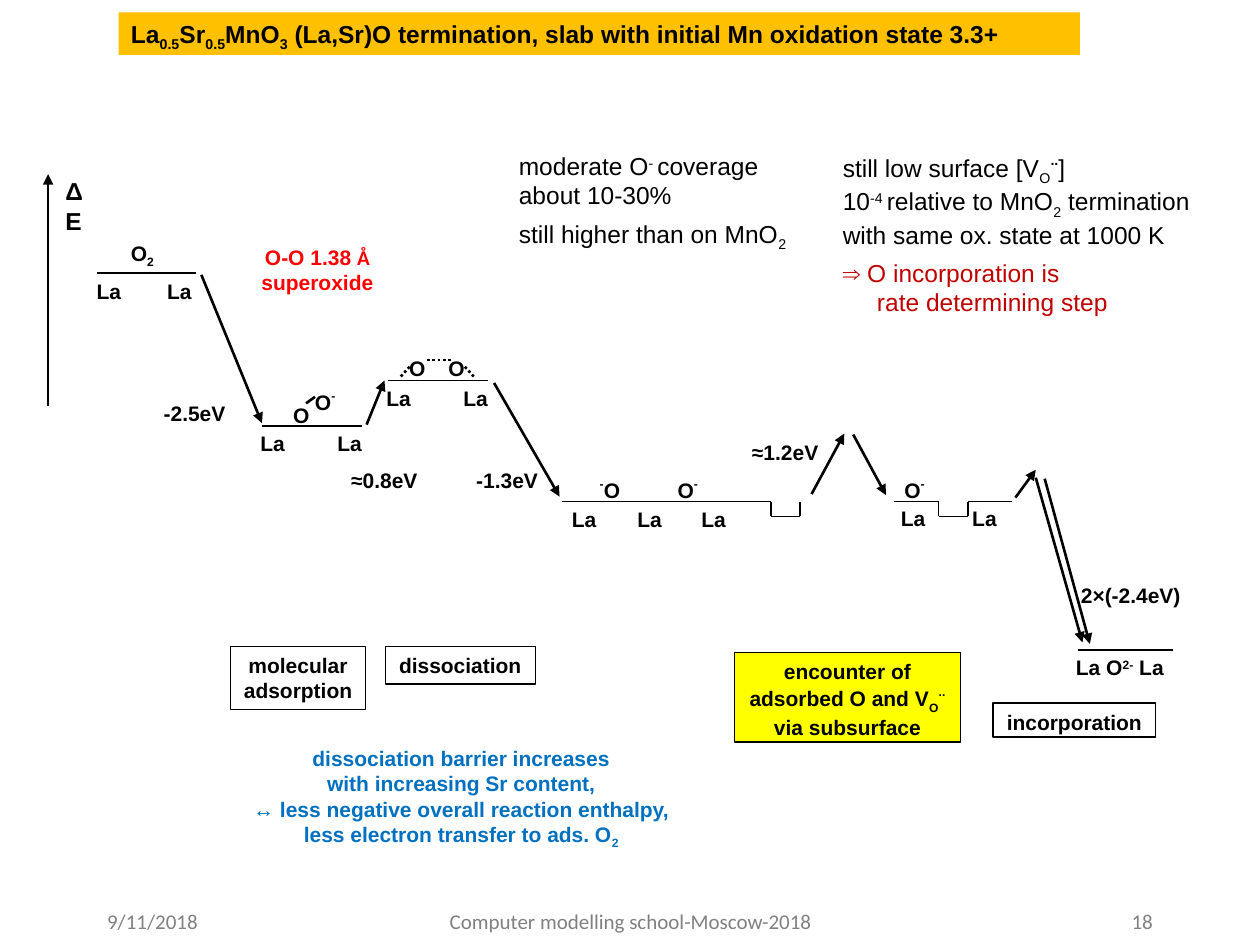
from lxml.etree import SubElement
from pptx import Presentation
from pptx.dml.color import RGBColor
from pptx.enum.dml import MSO_LINE
from pptx.enum.shapes import MSO_CONNECTOR, MSO_SHAPE
from pptx.enum.text import MSO_ANCHOR, PP_ALIGN
from pptx.oxml.ns import qn
from pptx.util import Cm, Pt

BLACK = RGBColor(0x00, 0x00, 0x00)
GRAY = RGBColor(0x80, 0x80, 0x80)
RED = RGBColor(0xFF, 0x00, 0x00)
DARK_RED = RGBColor(0xC0, 0x00, 0x00)
BLUE = RGBColor(0x00, 0x70, 0xC0)
YELLOW = RGBColor(0xFF, 0xFF, 0x00)
ORANGE = RGBColor(0xFF, 0xC0, 0x00)

SUB = -25
SUPER = 30
HIGH = 50
LEFT, CENTER, RIGHT = PP_ALIGN.LEFT, PP_ALIGN.CENTER, PP_ALIGN.RIGHT

presentation = Presentation()
presentation.slide_width = Cm(25.4)
presentation.slide_height = Cm(19.05)
slide = presentation.slides.add_slide(presentation.slide_layouts[6])


def add_text(left, top, width, height, lines, size=12, bold=True, color=BLACK,
             align=LEFT, font="Arial", fill=None, border=False):
    shape = slide.shapes.add_shape(
        MSO_SHAPE.RECTANGLE, Cm(left), Cm(top), Cm(width), Cm(height)
    ) if fill or border else slide.shapes.add_textbox(
        Cm(left), Cm(top), Cm(width), Cm(height))
    if fill or border:
        shape.shadow.inherit = False
        shape.fill.background()
        shape.line.fill.background()
    if fill:
        shape.fill.solid()
        shape.fill.fore_color.rgb = fill
    if border:
        shape.line.color.rgb = BLACK
        shape.line.width = Pt(0.75)
    frame = shape.text_frame
    frame.word_wrap = True
    frame.vertical_anchor = MSO_ANCHOR.TOP
    for index, line in enumerate(lines):
        paragraph = frame.paragraphs[0] if index == 0 else frame.add_paragraph()
        paragraph.alignment = align
        paragraph.font.name = font
        paragraph.font.size = Pt(size)
        paragraph.font.bold = bold
        paragraph.font.color.rgb = color
        for part in [line] if isinstance(line, str) else line:
            text, baseline = (part, 0) if isinstance(part, str) else part
            run = paragraph.add_run()
            run.text = text
            if baseline:
                run._r.get_or_add_rPr().set("baseline", str(baseline * 1000))
    return frame.paragraphs


def add_line(x1, y1, x2, y2, width=1, dotted=False, arrow=False):
    connector = slide.shapes.add_connector(
        MSO_CONNECTOR.STRAIGHT, Cm(x1), Cm(y1), Cm(x2), Cm(y2))
    connector.line.color.rgb = BLACK
    connector.line.width = Pt(width)
    if dotted:
        connector.line.dash_style = MSO_LINE.ROUND_DOT
    if arrow:
        SubElement(connector.line._get_or_add_ln(), qn("a:tailEnd"), type="triangle")
    SubElement(connector._element.spPr, qn("a:effectLst"))


add_text(2.39, 0.25, 19.38, 0.86, [[
    "La", ("0.5", SUB), "Sr", ("0.5", SUB), "MnO", ("3", SUB),
    " (La,Sr)O termination, slab with initial Mn oxidation state 3.3+",
]], size=14, fill=ORANGE)

add_line(0.97, 8.18, 0.97, 3.51, 1.5, arrow=True)
add_text(1.07, 3.43, 1.14, 0.84, ["ΔE"], size=14)

for x1, x2, y in [
    (1.96, 3.96, 5.51), (5.28, 7.29, 8.59), (7.82, 9.83, 7.67),
    (11.33, 15.54, 10.11), (18.03, 18.92, 10.11), (19.51, 20.4, 10.11),
    (21.74, 23.65, 13.11),
]:
    add_line(x1, y, x2, y)

for x in (15.54, 18.92):
    add_line(x, 10.11, x, 10.41)
    add_line(x + 0.59, 10.11, x + 0.59, 10.41)
    add_line(x, 10.41, x + 0.59, 10.41)

for top, lefts in [
    (5.49, (1.7, 3.12)), (8.56, (5, 6.55)), (7.65, (7.54, 9.09)),
    (10.08, (11.28, 12.6, 13.89)), (10.06, (17.91, 19.35)),
]:
    for left in lefts:
        add_text(left, top, 1.2, 0.5, ["La"])

for left, top, parts in [
    (2.39, 4.72, ["O", ("2", SUB)]), (6.1, 7.7, ["O", ("-", HIGH)]),
    (5.66, 8, ["O"]), (8, 7.04, ["O"]), (8.79, 7.04, ["O"]),
    (11.84, 9.47, [("-", HIGH), "O"]), (13.41, 9.47, ["O", ("-", HIGH)]),
    (17.98, 9.47, ["O", ("-", HIGH)]),
]:
    add_text(left, top, 1.2, 0.4, [parts])
add_text(21.44, 13.08, 2.5, 0.5, [["La O", ("2-", SUPER), " La"]])

add_line(6.35, 8, 6.17, 8.13, 1.5)
for x1, y1, x2, y2 in [
    (8.61, 7.26, 9.12, 7.26), (8.08, 7.59, 8.26, 7.39), (9.55, 7.59, 9.37, 7.39),
]:
    add_line(x1, y1, x2, y2, 1.5, dotted=True)

for x1, y1, x2, y2 in [
    (4.06, 5.54, 5.28, 8.53), (7.39, 8.56, 7.75, 7.67), (9.96, 7.72, 11.28, 10.01),
    (16.36, 9.96, 17.02, 8.74), (17.2, 8.76, 17.86, 9.98), (20.47, 10.03, 20.88, 9.47),
    (20.88, 9.63, 21.82, 12.95), (21.06, 9.65, 21.97, 12.98),
]:
    add_line(x1, y1, x2, y2, 1.5, arrow=True)

for left, top, width, energy in [
    (3.05, 7.95, 1.9, "-2.5eV"), (6.83, 9.3, 1.95, "≈0.8eV"), (9.35, 9.3, 1.9, "-1.3eV"),
    (14.91, 8.74, 1.95, "≈1.2eV"), (21.54, 11.61, 2.7, "2×(-2.4eV)"),
]:
    add_text(left, top, width, 0.76, [energy])

for left, top, width, height, lines, fill in [
    (4.65, 13.03, 2.72, 1.27, ["molecular", "adsorption"], None),
    (7.77, 13.03, 3.02, 0.76, ["dissociation"], None),
    (14.81, 13.16, 4.55, 1.8,
     ["encounter of", ["adsorbed O and V", ("O", SUB), ("..", HIGH)], "via subsurface"], YELLOW),
    (20.02, 14.17, 3.28, 0.69, ["incorporation"], None),
]:
    add_text(left, top, width, height, lines, align=CENTER, fill=fill, border=True)

superoxide = add_text(4.8, 4.8, 3.2, 1.27, [["O-O 1.38 ", "Å"], "superoxide"],
                      color=RED, align=CENTER)
superoxide[0].runs[1].font.name = "Calibri"

coverage = add_text(10.21, 2.92, 6.1, 2.24, [
    ["moderate O", ("- ", SUPER), "coverage"],
    "about 10-30%",
    ["still higher than on MnO", ("2", SUB)],
], size=14, bold=False)
coverage[2].space_before = Pt(5)

vacancies = add_text(16.74, 2.92, 7.8, 3.43, [
    ["still low surface [V", ("O", SUB), ("..", HIGH), "]"],
    ["10", ("-4 ", SUPER), "relative to MnO", ("2", SUB), " termination"],
    "with same ox. state at 1000 K",
    "⇒ O incorporation is",
    "rate determining step",
], size=14, bold=False)
vacancies[0].runs[2].font.bold = True
vacancies[3].space_before = Pt(5)
for paragraph in vacancies[3:]:
    paragraph.font.color.rgb = DARK_RED
vacancies[4]._p.get_or_add_pPr().set("marL", str(Cm(0.69)))

add_text(4.22, 14.91, 10.16, 2.31, [
    "dissociation barrier increases",
    "with increasing Sr content,",
    "↔ less negative overall reaction enthalpy,",
    ["less electron transfer to ads. O", ("2", SUB)],
], color=BLUE, align=CENTER)

for left, width, text, align in [
    (1.91, 5.28, "9/11/2018", LEFT),
    (8.69, 8.05, "Computer modelling school-Moscow-2018", CENTER),
    (18.21, 5.28, "18", RIGHT),
]:
    add_text(left, 18.19, width, 0.8, [text], bold=False, color=GRAY,
             align=align, font="Calibri")

presentation.save("out.pptx")
